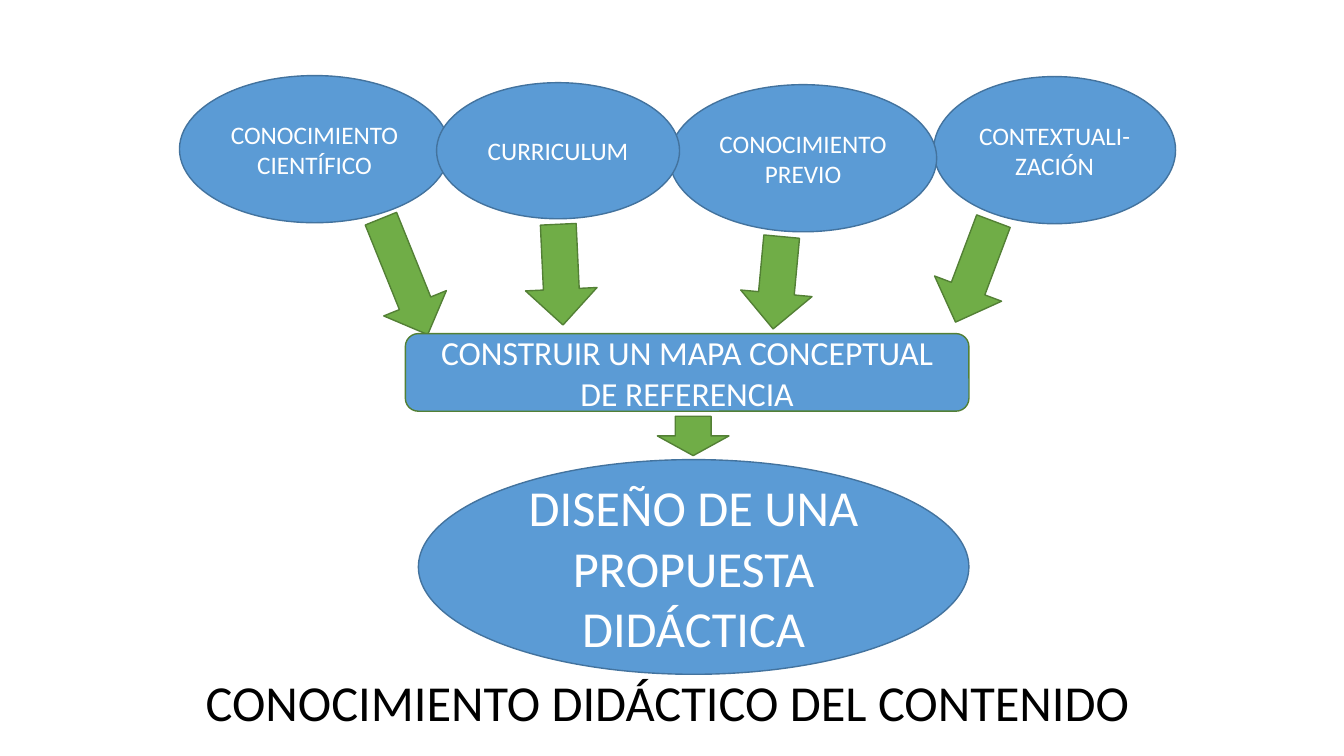
from pptx import Presentation
from pptx.dml.color import RGBColor
from pptx.enum.shapes import MSO_SHAPE
from pptx.enum.text import MSO_ANCHOR, MSO_AUTO_SIZE, PP_ALIGN
from pptx.util import Inches, Pt

FONT = "Calibri"
BLUE, NAVY = "5B9BD5", "43739E"
GREEN, MOSS = "70AD47", "538035"
WHITE, BLACK = "FFFFFF", "000000"


def color(code):
    return RGBColor.from_string(code)


def style(par, size, ink, align):
    par.alignment = align
    par.font.name = FONT
    par.font.size = Pt(size)
    par.font.color.rgb = color(ink)


def draw(slide, kind, box, fill, edge):
    shape = slide.shapes.add_shape(kind, *map(Inches, box))
    shape.shadow.inherit = False
    shape.fill.solid()
    shape.fill.fore_color.rgb = color(fill)
    shape.line.color.rgb = color(edge)
    shape.line.width = Pt(1)
    return shape


def node(slide, kind, box, text, size, edge=NAVY):
    frame = draw(slide, kind, box, BLUE, edge).text_frame
    frame.word_wrap = True
    frame.vertical_anchor = MSO_ANCHOR.MIDDLE
    frame.text = text
    for par in frame.paragraphs:
        style(par, size, WHITE, PP_ALIGN.CENTER)


def arrow(slide, box, angle):
    draw(slide, MSO_SHAPE.RIGHT_ARROW, box, GREEN, MOSS).rotation = angle


# Row of overlapping ovals: offsets from the row's corner, back to front
def sources(slide, left, top):
    ovals = [
        (0, 0, 2.68, 1.46, "CONOCIMIENTO\nCIENTÍFICO"),
        (7.48, 0.01, 2.4, 1.46, "CONTEXTUALI-ZACIÓN"),
        (4.86, 0.09, 2.65, 1.46, "CONOCIMIENTO\nPREVIO"),
        (2.55, 0.07, 2.41, 1.35, "CURRICULUM"),
    ]
    for x, y, wide, high, text in ovals:
        node(slide, MSO_SHAPE.OVAL, (left + x, top + y, wide, high), text, 18)


# Arrows leading from the ovals to the map: offsets from the band's corner
def links(slide, left, top):
    arrows = [
        (0, 0.07, 1.24, 0.67, 68),
        (1.67, 0.03, 1, 0.71, 87.3),
        (5.74, 0, 1.07, 0.71, 110.6),
        (3.86, 0.11, 0.92, 0.71, 95.3),
    ]
    for x, y, wide, high, angle in arrows:
        arrow(slide, (left + x, top + y, wide, high), angle)


# Concept map bar, arrow and final proposal
def result(slide, left, top):
    node(slide, MSO_SHAPE.OVAL, (left + 0.13, top + 1.25, 5.46, 2.13),
         "DISEÑO DE UNA PROPUESTA DIDÁCTICA", 36)
    node(slide, MSO_SHAPE.ROUNDED_RECTANGLE, (left, top, 5.59, 0.77),
         "CONSTRUIR UN MAPA CONCEPTUAL DE REFERENCIA", 24, MOSS)
    arrow(slide, (left + 2.66, top + 0.66, 0.39, 0.71), 90)


# Title along the foot of the slide
def heading(slide, left, top, wide, high):
    title = slide.shapes.title
    title.left, title.top = Inches(left), Inches(top)
    title.width, title.height = Inches(wide), Inches(high)
    frame = title.text_frame
    frame.text = "CONOCIMIENTO DIDÁCTICO DEL CONTENIDO"
    frame.word_wrap = True
    frame.auto_size = MSO_AUTO_SIZE.NONE
    frame.vertical_anchor = MSO_ANCHOR.MIDDLE
    par = frame.paragraphs[0]
    style(par, 36, BLACK, PP_ALIGN.LEFT)
    par.line_spacing = 0.9


def main():
    deck = Presentation()
    deck.slide_width, deck.slide_height = Inches(13.33), Inches(7.5)
    slide = deck.slides.add_slide(deck.slide_layouts.get_by_name("Title Only"))
    sources(slide, 1.78, 0.75)
    links(slide, 3.39, 2.34)
    result(slide, 4.02, 3.31)
    heading(slide, 1.94, 6.57, 9.53, 0.85)
    deck.save("out.pptx")


if __name__ == "__main__":
    main()
